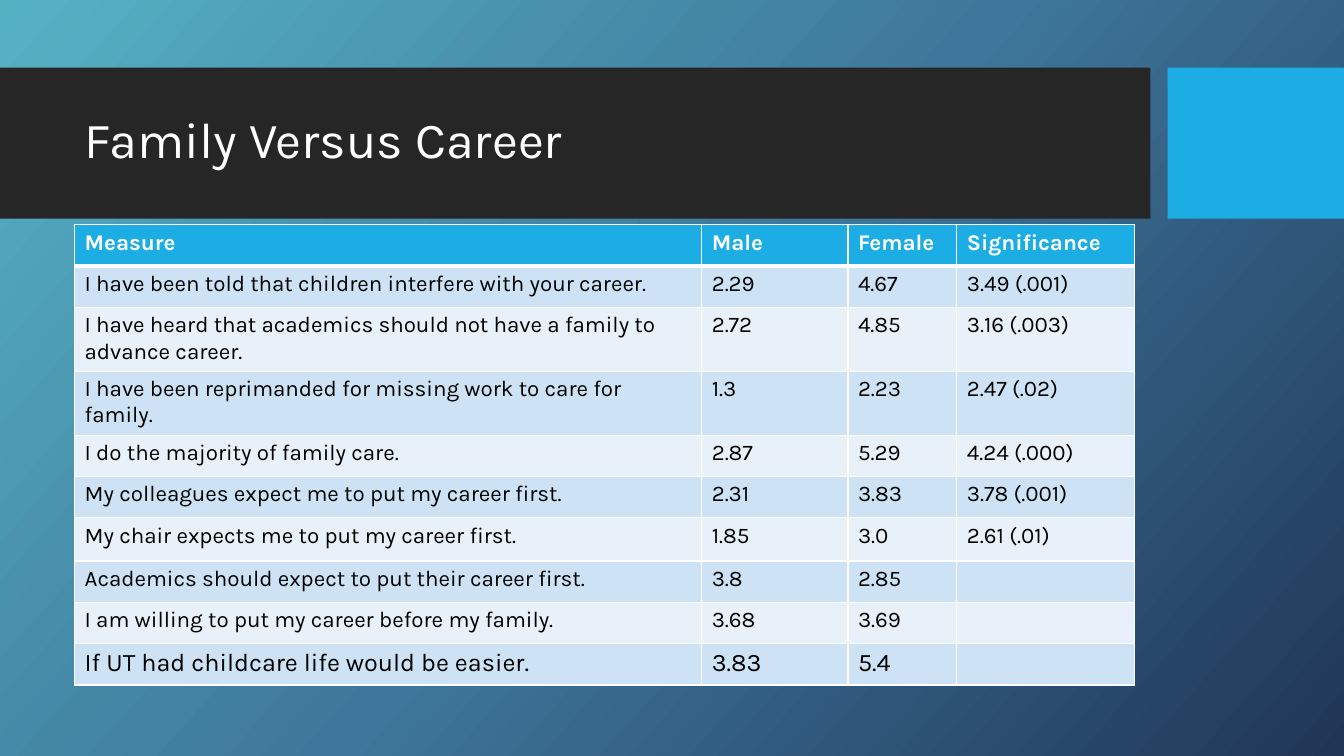
import pptx
import pptx.util
import pptx.dml.color
import pptx.enum.shapes
import pptx.enum.text
import pptx.oxml
import pptx.oxml.ns
import lxml.etree
from dataclasses import dataclass

Inches = pptx.util.Inches
qn = pptx.oxml.ns.qn


@dataclass(frozen=True)
class Theme:
    """Colours, font and type sizes of the slide."""
    font: str = "Karla"
    white: str = "FFFFFF"
    ink: str = "000000"
    dark: str = "262626"
    blue: str = "1CADE4"
    bands: tuple = ("CDE3F5", "E8F1FA")
    back: tuple = ((0, "55B2C3"), (50, "3E779B"), (100, "203657"))
    angle: int = 42
    title: int = 36
    body: int = 16
    large: int = 18


class Deck:
    """Holds the theme and the current slide and draws on it."""

    def __init__(self, theme):
        self.theme = theme
        self.show = pptx.Presentation()
        self.show.slide_width = Inches(13.33)
        self.show.slide_height = Inches(7.5)
        self.slide = self.show.slides.add_slide(self.show.slide_layouts[6])

    def paint(self, fill, color):
        """Give a fill one solid colour."""
        fill.solid()
        fill.fore_color.rgb = pptx.dml.color.RGBColor.from_string(color)

    def shade(self):
        """Fill the background with the theme gradient."""
        fill = self.slide.background.fill
        fill.gradient()
        fill.gradient_angle = 360 - self.theme.angle
        stops = next(self.slide.element.iter(qn("a:gsLst")))
        for stop in list(stops):
            stops.remove(stop)
        for place, color in self.theme.back:
            stop = lxml.etree.SubElement(stops, qn("a:gs"), pos=str(place * 1000))
            lxml.etree.SubElement(stop, qn("a:srgbClr"), val=color)

    def block(self, box, color):
        """Draw a plain rectangle."""
        kind = pptx.enum.shapes.MSO_SHAPE.RECTANGLE
        shape = self.slide.shapes.add_shape(kind, *map(Inches, box))
        shape.shadow.inherit = False
        shape.line.fill.background()
        self.paint(shape.fill, color)

    def label(self, frame, text, color, **form):
        """Put one styled line of text in a frame."""
        para = frame.paragraphs[0]
        run = para.add_run()
        run.text = text
        for name, value in {"name": self.theme.font, **form}.items():
            setattr(run.font, name, value)
        run.font.color.rgb = pptx.dml.color.RGBColor.from_string(color)
        return para

    def title(self, box, text):
        """Add the slide title."""
        frame = self.slide.shapes.add_textbox(*map(Inches, box)).text_frame
        frame.word_wrap = True
        frame.vertical_anchor = pptx.enum.text.MSO_ANCHOR.MIDDLE
        size = pptx.util.Pt(self.theme.title)
        self.label(frame, text, self.theme.white, size=size).line_spacing = 0.9

    def edge(self, cell, top, base):
        """Draw the four borders of a cell."""
        props = cell._tc.get_or_add_tcPr()
        for side, width in (("L", 1), ("R", 1), ("T", top), ("B", base)):
            line = lxml.etree.SubElement(
                props, qn(f"a:ln{side}"), w=str(pptx.util.Pt(width)))
            fill = lxml.etree.SubElement(line, qn("a:solidFill"))
            lxml.etree.SubElement(fill, qn("a:srgbClr"), val=self.theme.white)

    def table(self, box, widths, heights, rows):
        """Add a banded table with a bold header and a larger last row."""
        theme = self.theme
        grid = self.slide.shapes.add_table(
            len(rows), len(widths), *map(Inches, box)).table
        grid.horz_banding = False
        for col, width in zip(grid.columns, widths):
            col.width = Inches(width)
        for i, (row, height) in enumerate(zip(rows, heights)):
            grid.rows[i].height = Inches(height)
            head = i == 0
            fill = theme.blue if head else theme.bands[(i - 1) % 2]
            color = theme.white if head else theme.ink
            size = theme.large if i == len(rows) - 1 else theme.body
            for j, text in enumerate(row):
                cell = grid.cell(i, j)
                self.edge(cell, 3 if i == 1 else 1, 3 if head else 1)
                self.paint(cell.fill, fill)
                if text:
                    self.label(cell.text_frame, text, color,
                               size=pptx.util.Pt(size), bold=head)


ROWS = [
    ("Measure", "Male", "Female", "Significance"),
    ("I have been told that children interfere with your career.", "2.29", "4.67", "3.49 (.001)"),
    ("I have heard that academics should not have a family to advance career.",
     "2.72", "4.85", "3.16 (.003)"),
    ("I have been reprimanded for missing work to care for family.", "1.3", "2.23", "2.47 (.02)"),
    ("I do the majority of family care.", "2.87", "5.29", "4.24 (.000)"),
    ("My colleagues expect me to put my career first.", "2.31", "3.83", "3.78 (.001)"),
    ("My chair expects me to put my career first.", "1.85", "3.0", "2.61 (.01)"),
    ("Academics should expect to put their career first.", "3.8", "2.85", ""),
    ("I am willing to put my career before my family.", "3.68", "3.69", ""),
    ("If UT had childcare life would be easier.", "3.83", "5.4", ""),
]


def main():
    """Build the slide and save it."""
    theme = Theme()
    deck = Deck(theme)
    deck.shade()
    deck.block((0, 0.67, 11.41, 1.5), theme.dark)
    deck.block((11.58, 0.67, 1.75, 1.5), theme.blue)
    deck.title((0.74, 0.82, 10.51, 1.18), "Family Versus Career")
    heights = [0.41] * 6 + [0.43] + [0.41] * 3
    deck.table((0.74, 2.23, 10.51, 4.53), (6.22, 1.45, 1.08, 1.76), heights, ROWS)
    deck.show.save("out.pptx")


if __name__ == "__main__":
    main()
